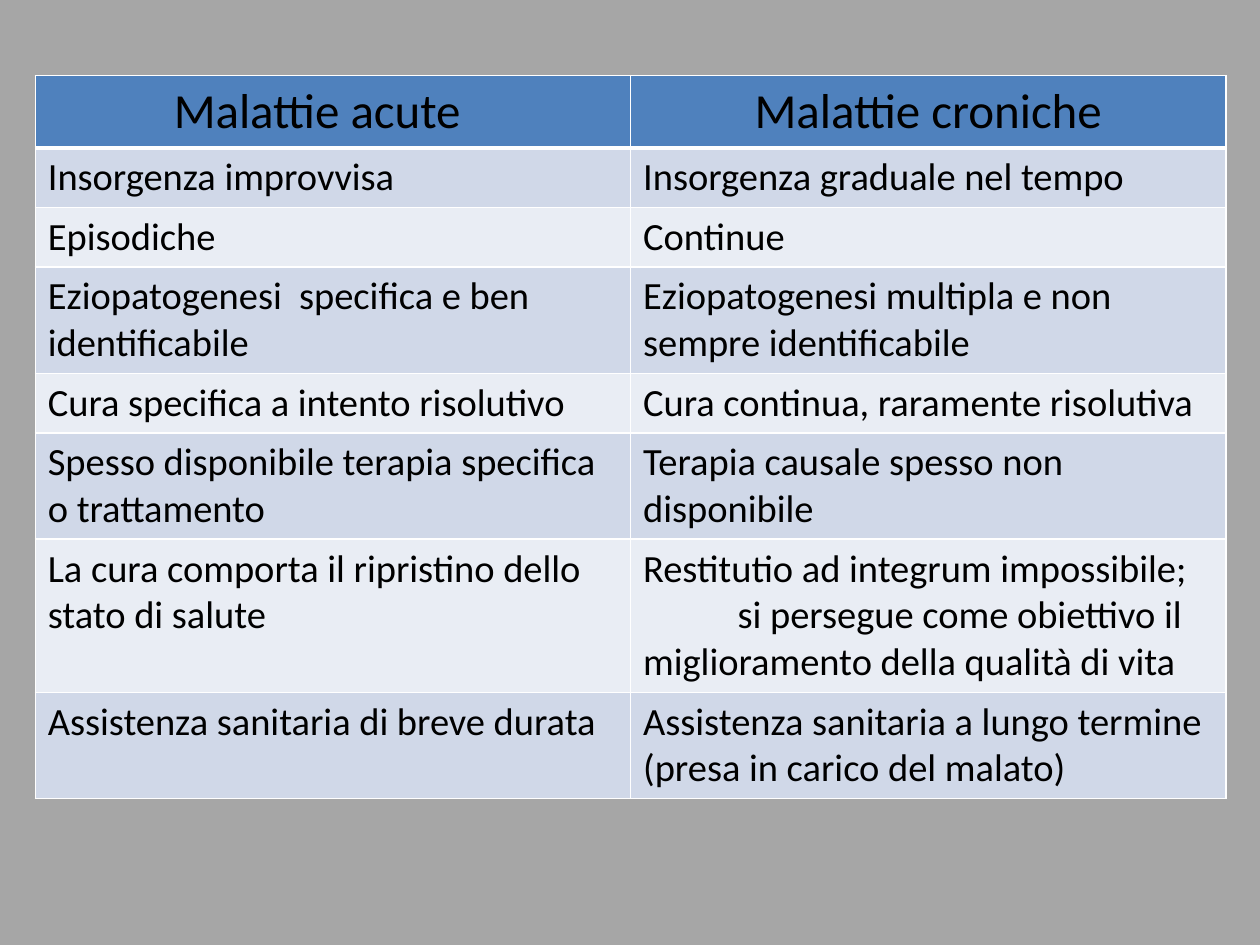
import pptx
import pptx.util
import pptx.dml.color
import pptx.enum.text
import pptx.oxml
import lxml.etree
from pptx.util import Inches


def rgb(value):
    return pptx.dml.color.RGBColor.from_string(value)


def add_border(cell, side, width, color):
    properties = cell._tc.get_or_add_tcPr()
    line = lxml.etree.SubElement(
        properties, pptx.oxml.ns.qn(f"a:ln{side}"), w=str(pptx.util.Pt(width)))
    fill = lxml.etree.SubElement(line, pptx.oxml.ns.qn("a:solidFill"))
    lxml.etree.SubElement(fill, pptx.oxml.ns.qn("a:srgbClr"), val=color)


comparison = [
    (0.57, "Malattie acute", "Malattie croniche"),
    (0.47, "Insorgenza improvvisa", "Insorgenza graduale nel tempo"),
    (0.47, "Episodiche", "Continue"),
    (0.84, "Eziopatogenesi  specifica e ben identificabile",
     "Eziopatogenesi multipla e non sempre identificabile"),
    (0.47, "Cura specifica a intento risolutivo",
     "Cura continua, raramente risolutiva"),
    (0.84, "Spesso disponibile terapia specifica o trattamento",
     "Terapia causale spesso non disponibile"),
    (1.21, "La cura comporta il ripristino dello stato di salute",
     "Restitutio ad integrum impossibile;\n"
     "si persegue come obiettivo il miglioramento della qualità di vita"),
    (0.84, "Assistenza sanitaria di breve durata",
     "Assistenza sanitaria a lungo termine (presa in carico del malato)"),
]

presentation = pptx.Presentation()
presentation.slide_width = Inches(10)
presentation.slide_height = Inches(7.5)
slide = presentation.slides.add_slide(presentation.slide_layouts[6])
slide.background.fill.solid()
slide.background.fill.fore_color.rgb = rgb("A6A6A6")

total_height = sum(height for height, *texts in comparison)
diseases = slide.shapes.add_table(
    len(comparison), 2, Inches(0.28), Inches(0.6),
    Inches(9.45), Inches(total_height)).table

for row, (height, *texts) in enumerate(comparison):
    diseases.rows[row].height = Inches(height)
    heading = row == 0
    band = "4F81BD" if heading else ("E9EDF4", "D0D8E8")[row % 2]
    for column, text in enumerate(texts):
        cell = diseases.cell(row, column)
        cell.text = text
        for side in "LRTB":
            thick = heading and side == "B" or row == 1 and side == "T"
            add_border(cell, side, 3 if thick else 1, "FFFFFF")
        cell.fill.solid()
        cell.fill.fore_color.rgb = rgb(band)
        for paragraph in cell.text_frame.paragraphs:
            paragraph.font.name = "Calibri"
            paragraph.font.size = pptx.util.Pt(28 if heading else 22)
            paragraph.font.bold = False
            paragraph.font.color.rgb = rgb("000000")
            if heading:
                paragraph.alignment = pptx.enum.text.PP_ALIGN.CENTER

diseases.cell(0, 0).margin_right = Inches(0.35)
goal = diseases.cell(6, 1).text_frame.paragraphs[1]
goal._p.get_or_add_pPr().set("indent", str(Inches(0.75)))

presentation.save("out.pptx")
